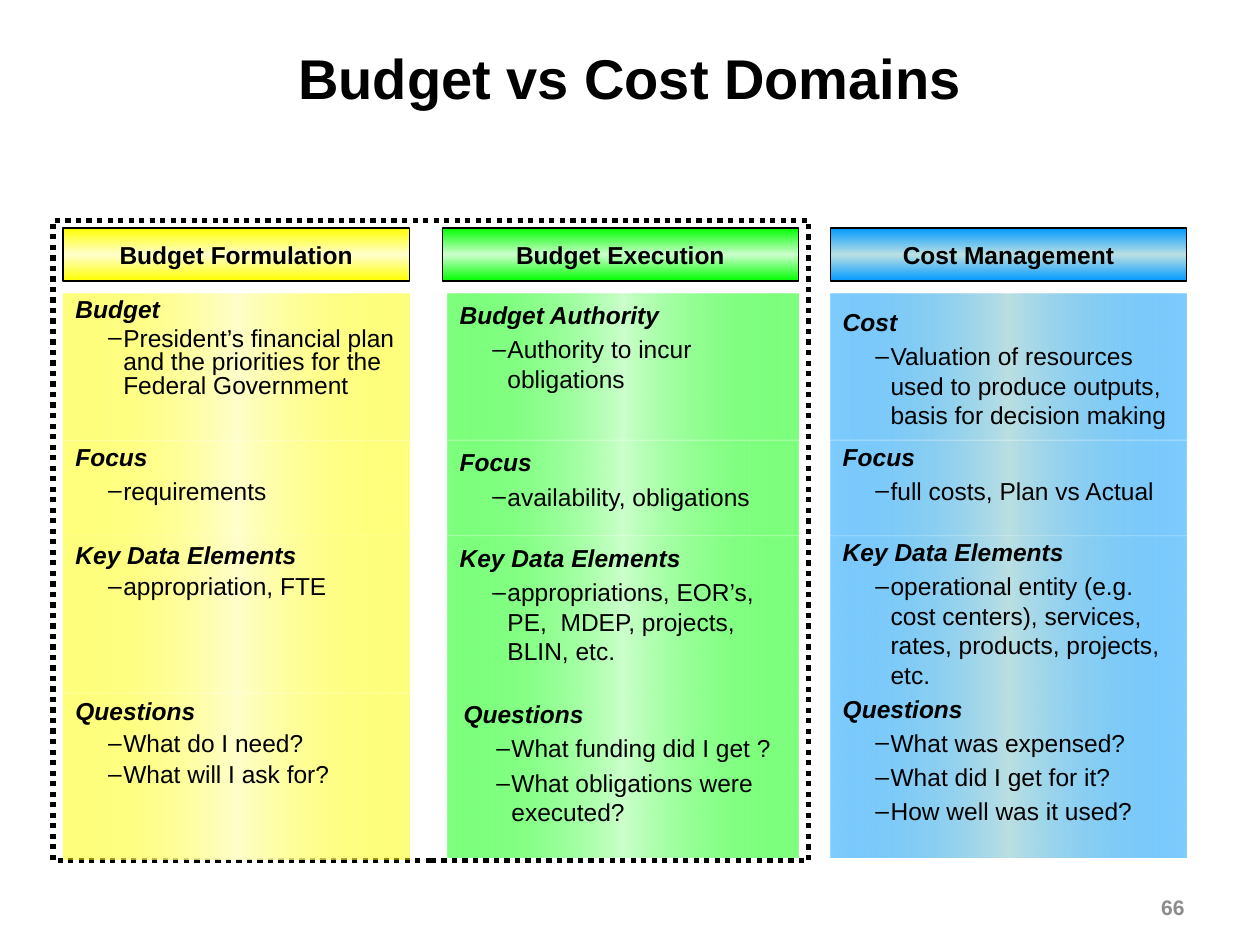
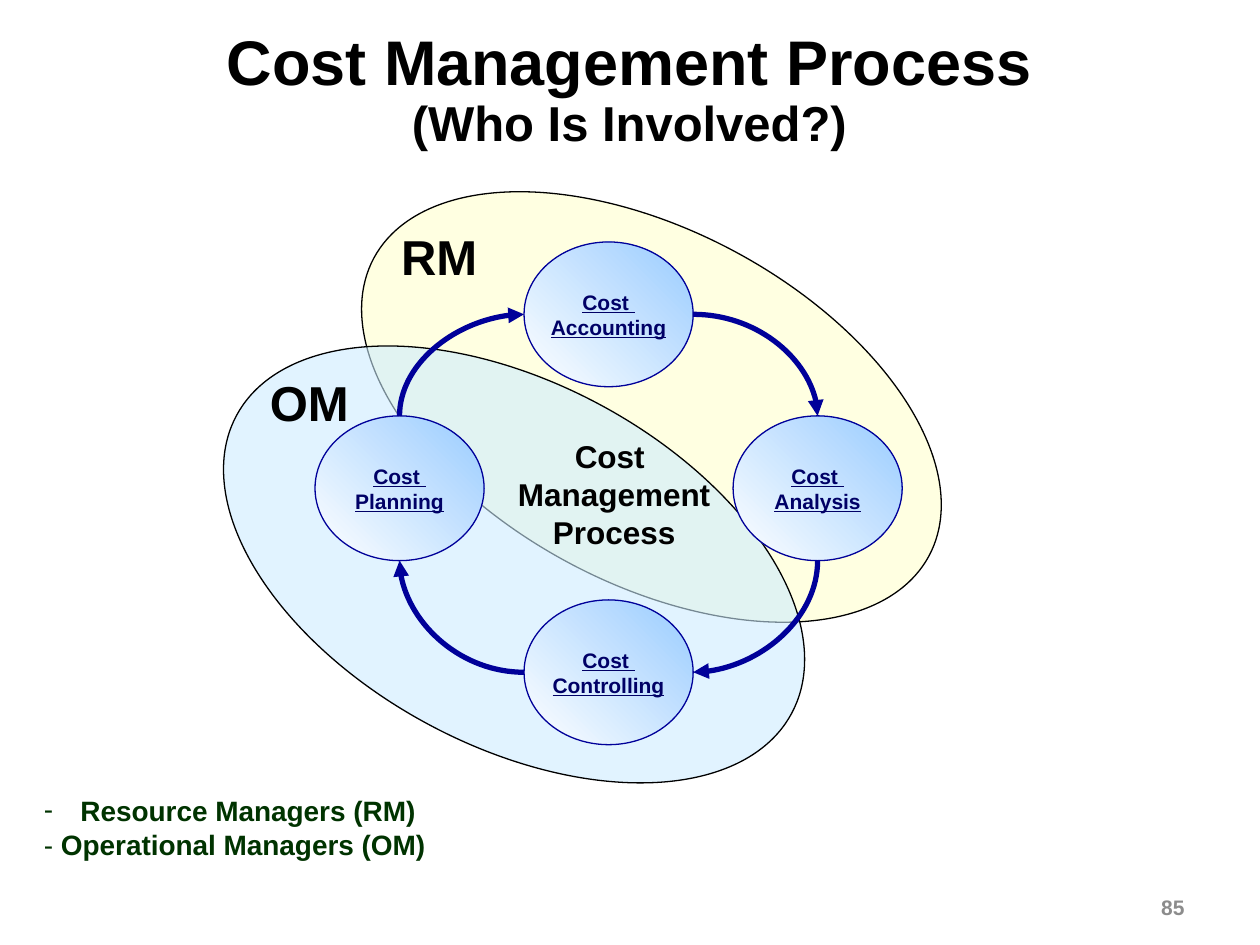
from dataclasses import dataclass

from lxml import etree
from pptx import Presentation
from pptx import util as u
from pptx.dml.color import RGBColor
from pptx.enum import dml, shapes, text
from pptx.oxml.ns import qn

FONT = "Arial"
BLACK, GRAY, NAVY, BLUE, GREEN = "000000", "8C8C8C", "000066", "000099", "003300"
CENTER = text.PP_ALIGN.CENTER
MIDDLE = text.MSO_ANCHOR.MIDDLE
RECTANGLE, OVAL = shapes.MSO_SHAPE.RECTANGLE, shapes.MSO_SHAPE.OVAL


@dataclass
class Box:
    """A region of the slide, in inches."""
    left: float
    top: float
    width: float
    height: float

    def inner(self, left, top, width, height):
        """Return an inner box given in percent of this one."""
        return Box(self.left + self.width * left / 100, self.top + self.height * top / 100,
                   self.width * width / 100, self.height * height / 100)

    def point(self, across, down):
        return self.left + self.width * across, self.top + self.height * down

    def lengths(self):
        return [u.Inches(n) for n in (self.left, self.top, self.width, self.height)]


SLIDE = Box(0, 0, 10, 7.5)


def rgb(color):
    return RGBColor.from_string(color)


def child(parent, tag, **attributes):
    return etree.SubElement(parent, qn(tag), {k: str(v) for k, v in attributes.items()})


def gradient(shape, stops, angle):
    """Fill with (position, colour, opacity) stops, angle clockwise in degrees."""
    shape.fill.gradient()
    fill = shape._element.spPr.find(qn("a:gradFill"))
    for element in list(fill):
        fill.remove(element)
    stop_list = child(fill, "a:gsLst")
    for position, color, opacity in stops:
        stop = child(stop_list, "a:gs", pos=position * 1000)
        color_element = child(stop, "a:srgbClr", val=color)
        if opacity < 100:
            child(color_element, "a:alpha", val=opacity * 1000)
    child(fill, "a:lin", ang=angle * 60000, scaled=0)


def add_shape(slide, kind, box, line=None, weight=0.75):
    shape = slide.shapes.add_shape(kind, *box.lengths())
    shape.shadow.inherit = False
    shape.fill.background()
    if line:
        shape.line.color.rgb = rgb(line)
        shape.line.width = u.Pt(weight)
    else:
        shape.line.fill.background()
    return shape


def add_bullet(paragraph, character, margin, hanging):
    properties = paragraph._p.get_or_add_pPr()
    properties.set("marL", str(u.Inches(margin)))
    properties.set("indent", str(-u.Inches(hanging)))
    child(properties, "a:buFont", typeface=FONT)
    child(properties, "a:buChar", char=character)


def style(paragraph, size, color=BLACK, bold=True, align=text.PP_ALIGN.LEFT):
    paragraph.alignment = align
    font = paragraph.font
    font.name, font.size, font.bold = FONT, u.Pt(size), bold
    font.color.rgb = rgb(color)
    return font


def next_paragraph(frame, index):
    return frame.add_paragraph() if index else frame.paragraphs[0]


def write(shape, lines, size, color=BLACK, align=CENTER, anchor=text.MSO_ANCHOR.TOP,
          wrap=False, underline=False):
    frame = shape.text_frame
    frame.word_wrap, frame.vertical_anchor = wrap, anchor
    for index, line in enumerate(lines):
        paragraph = next_paragraph(frame, index)
        paragraph.text = line
        font = style(paragraph, size, color, align=align)
        if underline:
            font.underline = True
    return frame


def add_label(slide, box, lines, size, **options):
    return write(slide.shapes.add_textbox(*box.lengths()), lines, size, **options)


def add_page_number(slide, number):
    add_label(slide, SLIDE.inner(71.7, 93.33, 23.3, 5.33), [number], 12, color=GRAY,
              align=text.PP_ALIGN.RIGHT, anchor=MIDDLE, wrap=True)


# Budget and cost domains

@dataclass
class Topic:
    heading: str
    items: list
    heading_spacing: float = 1
    item_spacing: float = 1


@dataclass
class Domain:
    name: str
    box: Box
    edge: str
    middle: str
    topics: list
    body_left: float = 0
    question_left: float = 0
    split_questions: bool = False


ROWS = [(10.4, 23.1), (33.7, 14.9), (48.8, 24.7), (73.6, 26.3)]
LOWER_HEIGHT = 50.8
DOMAINS = [
    Domain("Budget Formulation", Box(0.5, 1.81, 2.75, 5.02), "FFFF00", "FFFFCC", [
        Topic("Budget", ["President’s financial plan and the priorities for the "
                         "Federal Government"], 0.8, 0.8),
        Topic("Focus", ["requirements"], 0.8),
        Topic("Key Data Elements", ["appropriation, FTE"], 0.9, 0.9),
        Topic("Questions", ["What do I need?", "What will I ask for?"], 0.9, 0.9),
    ], split_questions=True),
    Domain("Budget Execution", Box(3.51, 1.81, 2.83, 5.02), "00FF00", "CCFFCC", [
        Topic("Budget Authority", ["Authority to incur obligations"]),
        Topic("Focus", ["availability, obligations"]),
        Topic("Key Data Elements", ["appropriations, EOR’s, PE,  MDEP, projects, BLIN, etc."]),
        Topic("Questions", ["What funding did I get ?", "What obligations were executed?"]),
    ], body_left=1.4, question_left=2.5),
    Domain("Cost Management", Box(6.59, 1.81, 2.83, 5.02), "0099FF", "BBE0E3", [
        Topic("Cost", ["Valuation of resources used to produce outputs, "
                       "basis for decision making"], 0.8),
        Topic("Focus", ["full costs, Plan vs Actual"], 0.8),
        Topic("Key Data Elements", ["operational entity (e.g. cost centers), services, "
                                    "rates, products, projects, etc."], 0.8),
        Topic("Questions", ["What was expensed?", "What did I get for it?",
                            "How well was it used?"], 0.8),
    ]),
]


def write_topic(shape, topic):
    frame = shape.text_frame
    frame.word_wrap, frame.vertical_anchor = True, text.MSO_ANCHOR.TOP
    for index, line in enumerate([topic.heading, *topic.items]):
        paragraph = next_paragraph(frame, index)
        paragraph.text = line
        if index:
            add_bullet(paragraph, "–", 0.38, 0.12)
            paragraph.space_before = u.Pt(2.8)
        paragraph.line_spacing = topic.item_spacing if index else topic.heading_spacing
        style(paragraph, 14, bold=not index).italic = not index


def domain_fill(shape, domain, opacity, angle):
    gradient(shape, [(0, domain.edge, opacity), (50, domain.middle, 100),
                     (100, domain.edge, opacity)], angle)


def add_topic_panel(slide, domain, row, height):
    panel = add_shape(slide, RECTANGLE, domain.box.inner(
        domain.body_left, ROWS[row][0], 100 - domain.body_left, height))
    domain_fill(panel, domain, 50, 0)
    write_topic(panel, domain.topics[row])
    return panel


def add_domain(slide, domain):
    header = add_shape(slide, RECTANGLE, domain.box.inner(0, 0, 100, 8.4), BLACK)
    domain_fill(header, domain, 100, 90)
    write(header, [domain.name], 14, anchor=MIDDLE)
    for row in range(3):
        joined = row == 2 and not domain.split_questions
        panel = add_topic_panel(slide, domain, row, LOWER_HEIGHT if joined else ROWS[row][1])
        if domain.topics[row].heading == "Cost":
            panel.text_frame.margin_top = panel.text_frame.margin_bottom = u.Inches(0.15)


def add_questions(slide, domain):
    top, height = ROWS[3]
    if domain.split_questions:
        add_topic_panel(slide, domain, 3, height)
    else:
        box = domain.box.inner(domain.question_left, top - 0.1, 98, height)
        write_topic(slide.shapes.add_textbox(*box.lengths()), domain.topics[3])


def build_domains(slide):
    for domain in DOMAINS:
        add_domain(slide, domain)
    frame = add_shape(slide, RECTANGLE, Box(0.42, 1.75, 6, 5.08), BLACK, 3)
    frame.line.dash_style = dml.MSO_LINE.ROUND_DOT
    for domain in DOMAINS:
        add_questions(slide, domain)
    add_label(slide, SLIDE.inner(12.5, 4, 75, 12.67), ["Budget vs Cost Domains"], 32, wrap=True)
    add_page_number(slide, "66")


# Cost management process

def add_manager_area(slide, box, color, name, label_box):
    area = add_shape(slide, OVAL, box, BLACK)
    area.rotation = 28.2
    area.fill.solid()
    area.fill.fore_color.rgb = rgb(color)
    child(area._element.spPr.find(qn("a:solidFill"))[0], "a:alpha", val=58000)
    add_label(slide, label_box, [name], 28)


def add_step(slide, box, name):
    step = add_shape(slide, OVAL, box, BLUE)
    gradient(step, [(0, "FFFFFF", 100), (100, "99CCFF", 100)], 315)
    write(step, ["Cost ", name], 12, NAVY, anchor=MIDDLE, underline=True)


def add_arc(slide, start, end, quarter_turns):
    """Draw a quarter-curve arrow, turned clockwise from right-then-down."""
    width, height = abs(end[0] - start[0]), abs(end[1] - start[1])
    if quarter_turns % 2:
        width, height = height, width
    middle_x, middle_y = (start[0] + end[0]) / 2, (start[1] + end[1]) / 2
    arc = slide.shapes.add_connector(
        shapes.MSO_CONNECTOR.CURVE,
        u.Inches(middle_x - width / 2), u.Inches(middle_y - height / 2),
        u.Inches(middle_x + width / 2), u.Inches(middle_y + height / 2))
    arc.line.color.rgb = rgb(BLUE)
    arc.line.width = u.Pt(3)
    properties = arc._element.spPr
    properties.find(qn("a:xfrm")).set("rot", str(quarter_turns * 90 * 60000))
    properties.find(qn("a:prstGeom")).set("prst", "curvedConnector2")
    child(properties.find(qn("a:ln")), "a:tailEnd", type="triangle")
    child(properties, "a:effectLst")


def add_cycle(slide, box):
    size, far = 28.8, 71.2
    places = {"Accounting": (35.6, 0), "Analysis": (far, 34.6),
              "Controlling": (35.6, far), "Planning": (0, 34.6)}
    steps = [box.inner(left, top, size, size) for left, top in places.values()]
    for step, name in zip(steps, places):
        add_step(slide, step, name)
    sides = [(1, 0.5), (0.5, 1), (0, 0.5), (0.5, 0)]
    arrivals = [(0.5, 0), (1, 0.5), (0.5, 1), (0, 0.5)]
    for turn, (side, arrival) in enumerate(zip(sides, arrivals)):
        add_arc(slide, steps[turn].point(*side), steps[(turn + 1) % 4].point(*arrival), turn)
    add_label(slide, box.inner(32.4, 37.6, 37.1, 25), ["Cost ", "Management", "Process"], 18)


def add_legend(slide, box):
    frame = add_label(slide, box, ["Resource Managers (RM)", ""], 16, color=GREEN,
                      align=text.PP_ALIGN.LEFT)
    first, second = frame.paragraphs
    first_properties = first._p.get_or_add_pPr()
    font_defaults = first_properties.find(qn("a:defRPr"))
    add_bullet(first, "-", 0.29, 0.29)
    first_properties.append(font_defaults)
    dash, name = second.add_run(), second.add_run()
    dash.text, name.text = "- ", "Operational Managers (OM)"
    dash.font.bold = False


def build_process(slide):
    add_manager_area(slide, Box(2.67, 1.83, 5, 2.8), "FFFFCC", "RM", Box(3.08, 1.75, 0.81, 0.57))
    add_manager_area(slide, Box(1.58, 3.04, 5, 2.88), "CCECFF", "OM", Box(2.04, 2.91, 0.83, 0.57))
    add_legend(slide, SLIDE.inner(2.5, 83.33, 32.4, 8.53))
    title = add_label(slide, SLIDE.inner(13.3, 3.33, 73.3, 8.27),
                      ["Cost Management Process\v(Who Is Involved?)"], 36, wrap=True)
    title.margin_top = title.margin_bottom = 0
    title.paragraphs[0].line_spacing = 0.9
    title.paragraphs[0].runs[1].font.size = u.Pt(28)
    add_cycle(slide, Box(2.5, 1.92, 4.66, 3.99))
    add_page_number(slide, "85")


def main():
    presentation = Presentation()
    presentation.slide_width = u.Inches(SLIDE.width)
    presentation.slide_height = u.Inches(SLIDE.height)
    for build in (build_domains, build_process):
        build(presentation.slides.add_slide(presentation.slide_layouts[6]))
    presentation.save("out.pptx")


if __name__ == "__main__":
    main()
